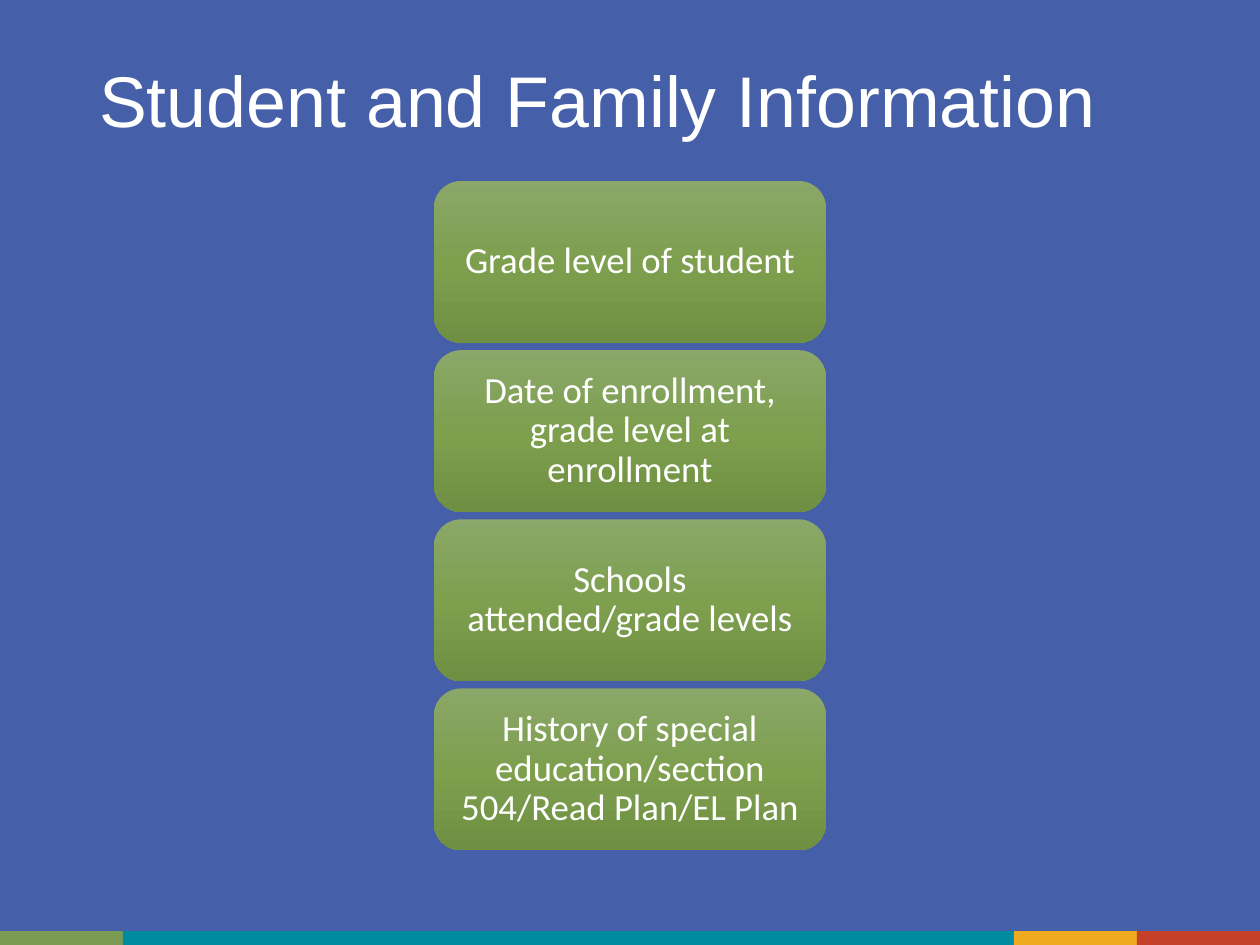
from typing import NamedTuple

from lxml import etree
from pptx import Presentation
from pptx import util as u
from pptx.dml.color import RGBColor
from pptx.enum import shapes, text
from pptx.oxml.ns import qn

COLOURS = {
    "background": "455FA9", "text": "FFFFFF",
    "green": "7C9B52", "teal": "008CA0", "amber": "EFAA1F", "red": "C63F28",
    "card top": "8BA769", "card middle": "7D9F4E", "card bottom": "6F9042",
}
CARD_GRADIENT = {0: "card top", 50: "card middle", 100: "card bottom"}
SLIDE_WIDTH, SLIDE_HEIGHT = 25.4, 19.05
STRIPE_HEIGHT = 0.28
CARD_WIDTH, CARD_HEIGHT = 7.9, 3.26
FIRST_CARD_TOP, CARD_PITCH = 3.65, 3.41


class Stripe(NamedTuple):
    colour: str
    width: float


STRIPES = [Stripe("green", 2.48), Stripe("teal", 17.96),
           Stripe("amber", 2.48), Stripe("red", 2.48)]
TOPICS = [
    "Grade level of student",
    "Date of enrollment, grade level at enrollment",
    "Schools attended/grade levels",
    "History of special education/section 504/Read Plan/EL Plan",
]


def rgb(name: str) -> RGBColor:
    return RGBColor.from_string(COLOURS[name])


def add_block(slide, preset, left: float, top: float, width: float, height: float):
    """Add a preset shape without line or shadow; lengths in cm."""
    block = slide.shapes.add_shape(preset, u.Cm(left), u.Cm(top), u.Cm(width), u.Cm(height))
    block.shadow.inherit = False
    block.line.fill.background()
    return block


def write_text(frame, words: str, *, font: str, size: float, align,
               inset_x: float, inset_y: float) -> None:
    frame.word_wrap = True
    frame.vertical_anchor = text.MSO_ANCHOR.MIDDLE
    frame.margin_left = frame.margin_right = u.Cm(inset_x)
    frame.margin_top = frame.margin_bottom = u.Cm(inset_y)
    paragraph = frame.paragraphs[0]
    paragraph.alignment = align
    paragraph.line_spacing = 0.9
    run = paragraph.add_run()
    run.text = words
    run.font.name = font
    run.font.size = u.Pt(size)
    run.font.color.rgb = rgb("text")


def fill_downward(shape, stops: dict[int, str]) -> None:
    """Fill with a top-to-bottom gradient, stops given in percent."""
    shape.fill.gradient()
    shape.fill.gradient_angle = 270
    stop_list = shape.element.spPr.find(qn("a:gradFill")).find(qn("a:gsLst"))
    for default_stop in list(stop_list):
        stop_list.remove(default_stop)
    for percent, colour in stops.items():
        stop = etree.SubElement(stop_list, qn("a:gs"), pos=str(percent * 1000))
        etree.SubElement(stop, qn("a:srgbClr"), val=COLOURS[colour])


def add_stripes(slide) -> None:
    left = 0.0
    for stripe in STRIPES:
        block = add_block(slide, shapes.MSO_SHAPE.RECTANGLE, left,
                          SLIDE_HEIGHT - STRIPE_HEIGHT, stripe.width, STRIPE_HEIGHT)
        block.fill.solid()
        block.fill.fore_color.rgb = rgb(stripe.colour)
        left += stripe.width


def add_topic_cards(slide) -> None:
    for row, topic in enumerate(TOPICS):
        card = add_block(slide, shapes.MSO_SHAPE.ROUNDED_RECTANGLE,
                         (SLIDE_WIDTH - CARD_WIDTH) / 2, FIRST_CARD_TOP + row * CARD_PITCH,
                         CARD_WIDTH, CARD_HEIGHT)
        fill_downward(card, CARD_GRADIENT)
        write_text(card.text_frame, topic, font="Calibri", size=21,
                   align=text.PP_ALIGN.CENTER, inset_x=0.22, inset_y=0.11)


def main() -> None:
    deck = Presentation()
    deck.slide_width, deck.slide_height = u.Cm(SLIDE_WIDTH), u.Cm(SLIDE_HEIGHT)
    slide = deck.slides.add_slide(deck.slide_layouts[6])
    slide.background.fill.solid()
    slide.background.fill.fore_color.rgb = rgb("background")

    add_stripes(slide)
    title = slide.shapes.add_textbox(u.Cm(1.75), u.Cm(1.02), u.Cm(21.9), u.Cm(2.18))
    write_text(title.text_frame, "Student and Family Information", font="Arial", size=41,
               align=text.PP_ALIGN.LEFT, inset_x=0.25, inset_y=0.13)
    add_topic_cards(slide)
    deck.save("out.pptx")


if __name__ == "__main__":
    main()
